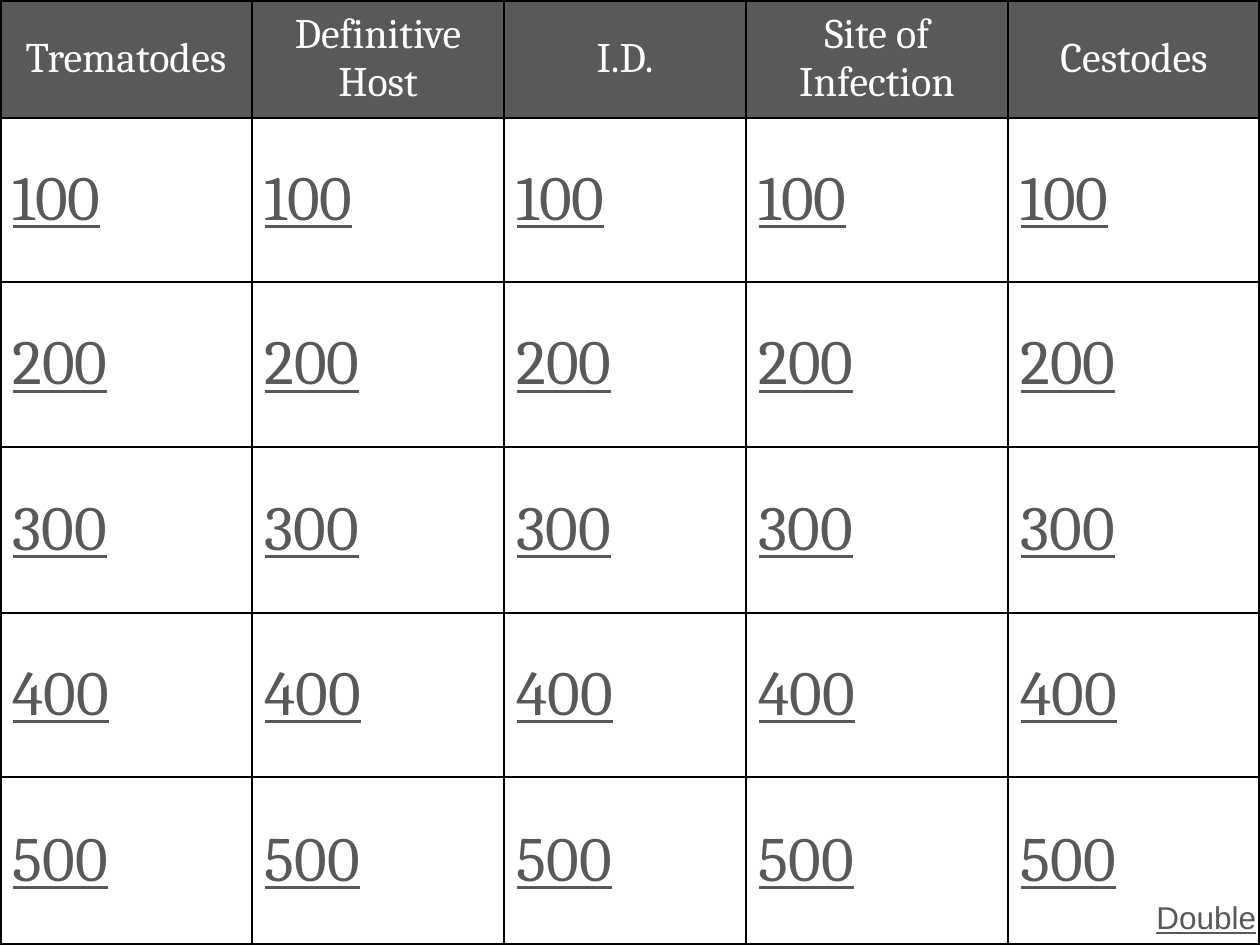
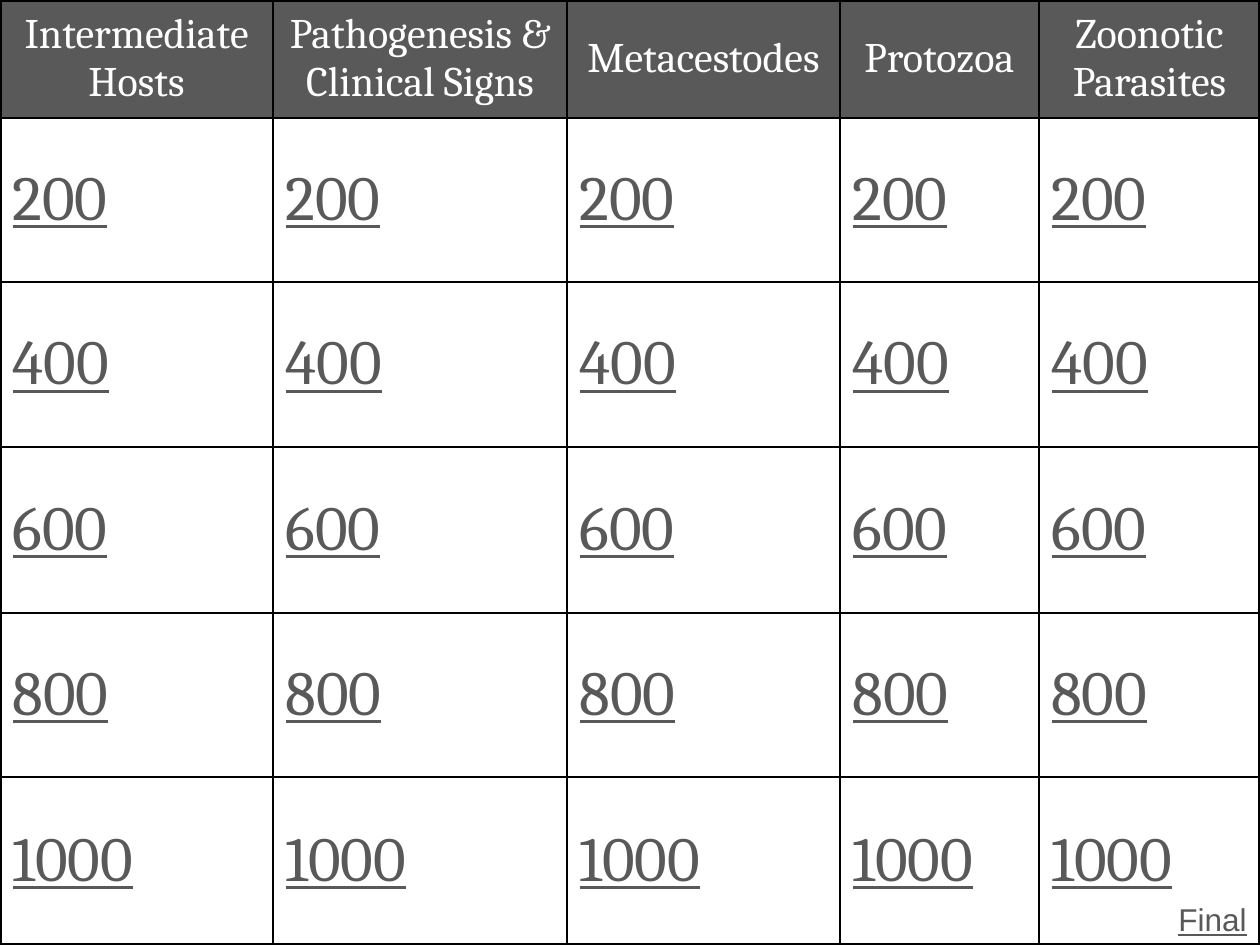
"""Build the two question boards of a parasitology quiz game."""
from lxml import etree
from pptx import Presentation
from pptx import util as u
from pptx.dml.color import RGBColor
from pptx.enum import text
from pptx.oxml import ns

PX_PER_INCH = 126
WIDTH, HEIGHT = 1260, 945
ROW_HEIGHTS = [118, 164, 165, 166, 164, 168]
GREY = RGBColor(0x59, 0x59, 0x59)
WHITE = RGBColor(0xFF, 0xFF, 0xFF)
BLACK = RGBColor(0, 0, 0)
BOARD_FONT, LINK_FONT = "Cambria", "Arial"
INNER_LINE, OUTER_LINE = 1, 2.25


def px(length):
    return u.Emu(round(length * 914400 / PX_PER_INCH))


def write(frame, words, *, size, font, color=GREY, underline=None, align=text.PP_ALIGN.LEFT):
    para = frame.paragraphs[0]
    para.alignment = align
    span = para.add_run()
    span.text = words
    span.font.size = u.Pt(size)
    span.font.name = font
    span.font.color.rgb = color
    span.font.underline = underline


def draw_border(cell, side, points):
    properties = cell._tc.get_or_add_tcPr()
    line = etree.SubElement(properties, ns.qn(f"a:ln{side}"), w=str(u.Pt(points)))
    fill = etree.SubElement(line, ns.qn("a:solidFill"))
    etree.SubElement(fill, ns.qn("a:srgbClr"), val=str(BLACK))


class Board:
    def __init__(self, deck):
        self.deck = deck
        self.slide = None

    def new_slide(self):
        self.slide = self.deck.slides.add_slide(self.deck.slide_layouts[6])

    def grid(self, topics, step, widths, header_margin):
        rows, columns = len(ROW_HEIGHTS), len(topics)
        frame = self.slide.shapes.add_table(rows, columns, 0, 0, px(WIDTH), px(HEIGHT))
        table = frame.table
        table.first_row = table.horz_banding = False
        for column, width in zip(table.columns, widths):
            column.width = px(width)
        for row, height in zip(table.rows, ROW_HEIGHTS):
            row.height = px(height)
        for r in range(rows):
            for c, topic in enumerate(topics):
                cell = table.cell(r, c)
                cell.vertical_anchor = text.MSO_ANCHOR.MIDDLE
                edges = {"L": c == 0, "R": c == columns - 1, "T": r == 0, "B": r == rows - 1}
                for side, outer in edges.items():
                    draw_border(cell, side, OUTER_LINE if outer else INNER_LINE)
                if r == 0:
                    self.header(cell, topic, header_margin)
                else:
                    cell.fill.background()
                    write(cell.text_frame, str(r * step), size=36, font=BOARD_FONT, underline=True)

    def header(self, cell, topic, margin):
        cell.fill.solid()
        cell.fill.fore_color.rgb = GREY
        cell.margin_left = cell.margin_right = u.Inches(margin)
        write(cell.text_frame, topic, size=24, font=BOARD_FONT, color=WHITE,
              align=text.PP_ALIGN.CENTER)

    def corner_label(self, words, left, top, width, wrap):
        box = self.slide.shapes.add_textbox(px(left), px(top), px(width), px(50))
        box.text_frame.word_wrap = wrap
        box.text_frame.auto_size = text.MSO_AUTO_SIZE.SHAPE_TO_FIT_TEXT
        write(box.text_frame, words, size=18, font=LINK_FONT, underline=True)


def main():
    deck = Presentation()
    deck.slide_width, deck.slide_height = px(WIDTH), px(HEIGHT)
    board = Board(deck)

    board.new_slide()
    board.grid(["Trematodes", "Definitive Host", "I.D.", "Site of Infection", "Cestodes"],
               step=100, widths=[252, 252, 242, 262, 252], header_margin=0.1)
    board.corner_label("Double", 1144, 892, 252, wrap=True)

    board.new_slide()
    board.grid(["Intermediate Hosts", "Pathogenesis & Clinical Signs", "Metacestodes",
                "Protozoa", "Zoonotic Parasites"],
               step=200, widths=[273, 294, 273, 199, 221], header_margin=0)
    board.corner_label("Final", 1166, 894, 94, wrap=False)

    deck.save("out.pptx")


if __name__ == "__main__":
    main()
